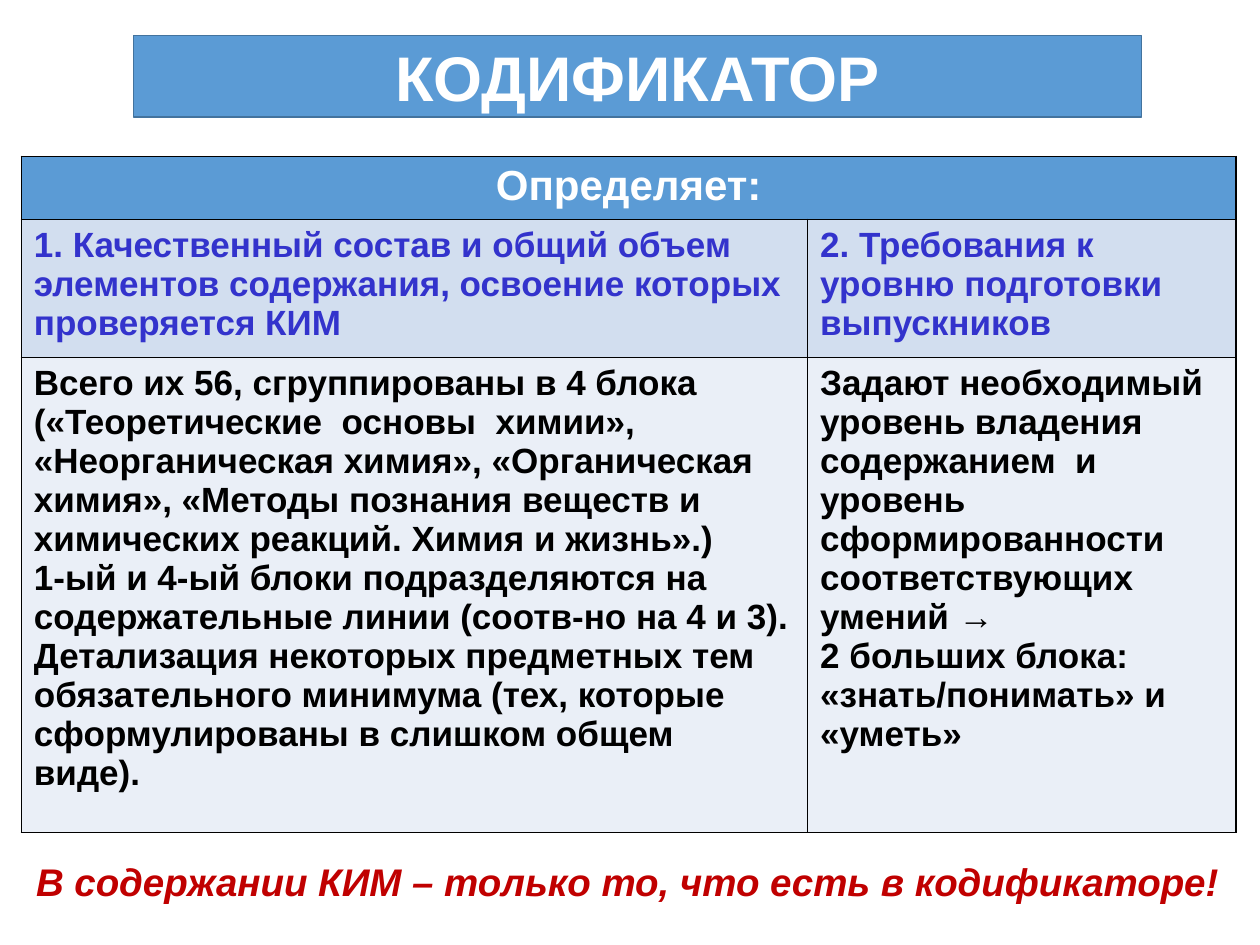
"""Builds the slide on what the exam codifier defines."""
from lxml import etree
from pptx import Presentation
from pptx import util as u
from pptx.dml.color import RGBColor
from pptx.enum import text
from pptx.oxml import ns

COLORS = {"blue": "5B9BD5", "edge": "43739E", "white": "FFFFFF", "black": "000000",
          "violet": "3333CC", "band": "D2DEEF", "pale": "EAEFF7", "red": "C00000"}

HEADING = ["Определяет:"]
TOPICS = [
    ["1. Качественный состав и общий объем элементов содержания, освоение которых "
     "проверяется КИМ"],
    ["2. Требования к уровню подготовки выпускников"],
]
DETAILS = [
    ["Всего их 56, сгруппированы в 4 блока («Теоретические  основы  химии», "
     "«Неорганическая химия», «Органическая химия», «Методы познания веществ и "
     "химических реакций. Химия и жизнь».)",
     "1-ый и 4-ый блоки подразделяются на содержательные линии (соотв-но на 4 и 3).",
     "Детализация некоторых предметных тем обязательного минимума (тех, которые "
     "сформулированы в слишком общем  виде)."],
    ["Задают необходимый уровень владения содержанием  и уровень сформированности "
     "соответствующих умений →",
     "2 больших блока: «знать/понимать» и «уметь»"],
]


class CodifierSlide:
    """Holds the style and the current slide."""

    def __init__(self, deck):
        self.font = {"name": "Arial", "bold": True}
        self.slide = deck.slides.add_slide(deck.slide_layouts[5])

    def color(self, key):
        """Return the named colour."""
        return RGBColor.from_string(COLORS[key])

    def wording(self, frame, paragraphs, color, align=text.PP_ALIGN.LEFT, **formats):
        """Fill a text frame with formatted paragraphs."""
        frame.word_wrap = True
        for index, sentence in enumerate(paragraphs):
            paragraph = frame.add_paragraph() if index else frame.paragraphs[0]
            paragraph.alignment = align
            run = paragraph.add_run()
            run.text = sentence
            for key, value in {**self.font, **formats}.items():
                setattr(run.font, key, value)
            run.font.color.rgb = self.color(color)

    def title(self, heading, **place):
        """Turn the title placeholder into a rounded banner."""
        banner = self.slide.shapes.title
        for key, value in place.items():
            setattr(banner, key, u.Pt(value))
        outline = etree.SubElement(banner.element.spPr, ns.qn("a:prstGeom"), prst="roundRect")
        etree.SubElement(outline, ns.qn("a:avLst"))
        banner.fill.solid()
        banner.fill.fore_color.rgb = self.color("blue")
        banner.line.color.rgb = self.color("edge")
        banner.line.width = u.Pt(1)
        banner.text_frame.auto_size = text.MSO_AUTO_SIZE.NONE
        banner.text_frame.vertical_anchor = text.MSO_ANCHOR.MIDDLE
        self.wording(banner.text_frame, [heading], "white", text.PP_ALIGN.CENTER, size=u.Pt(36))

    def table(self, left, top, widths, heights):
        """Add a bordered table with the given column widths and row heights."""
        grid = self.slide.shapes.add_table(
            len(heights), len(widths), u.Pt(left), u.Pt(top),
            u.Pt(sum(widths)), u.Pt(sum(heights))).table
        for column, width in zip(grid.columns, widths):
            column.width = u.Pt(width)
        for row, height in zip(grid.rows, heights):
            row.height = u.Pt(height)
        for cell in grid.iter_cells():
            self.border(cell)
        return grid

    def border(self, cell):
        """Draw a thin black line on every side of a cell."""
        properties = cell._tc.get_or_add_tcPr()
        for side in ("lnL", "lnR", "lnT", "lnB"):
            line = etree.SubElement(properties, ns.qn(f"a:{side}"), w=str(u.Pt(1)))
            fill = etree.SubElement(line, ns.qn("a:solidFill"))
            etree.SubElement(fill, ns.qn("a:srgbClr"), val=COLORS["black"])

    def cell(self, cell, paragraphs, fill, color, **formats):
        """Fill one table cell with colour and text."""
        cell.fill.solid()
        cell.fill.fore_color.rgb = self.color(fill)
        self.wording(cell.text_frame, paragraphs, color, **formats)

    def note(self, remark, left, top, width, height):
        """Add the centred closing remark."""
        box = self.slide.shapes.add_textbox(*map(u.Pt, (left, top, width, height)))
        self.wording(box.text_frame, [remark], "red", text.PP_ALIGN.CENTER,
                     size=u.Pt(22), italic=True)


def main():
    """Build and save the slide."""
    deck = Presentation()
    deck.slide_width, deck.slide_height = u.Pt(720), u.Pt(540)
    codifier = CodifierSlide(deck)
    codifier.title("КОДИФИКАТОР", left=76.3, top=20.2, width=576, height=46.8)

    grid = codifier.table(12.2, 89.3, widths=[449.3, 244.8], heights=[36, 79, 271.5])
    grid.cell(0, 0).merge(grid.cell(0, 1))
    codifier.cell(grid.cell(0, 0), HEADING, "blue", "white",
                  align=text.PP_ALIGN.CENTER, size=u.Pt(24))
    for column, (topic, detail) in enumerate(zip(TOPICS, DETAILS)):
        codifier.cell(grid.cell(1, column), topic, "band", "violet", size=u.Pt(20))
        codifier.cell(grid.cell(2, column), detail, "pale", "black", size=u.Pt(20))

    codifier.note("В содержании КИМ – только то, что есть в кодификаторе!",
                  10.1, 486.7, 697, 33.8)
    deck.save("out.pptx")


if __name__ == "__main__":
    main()
